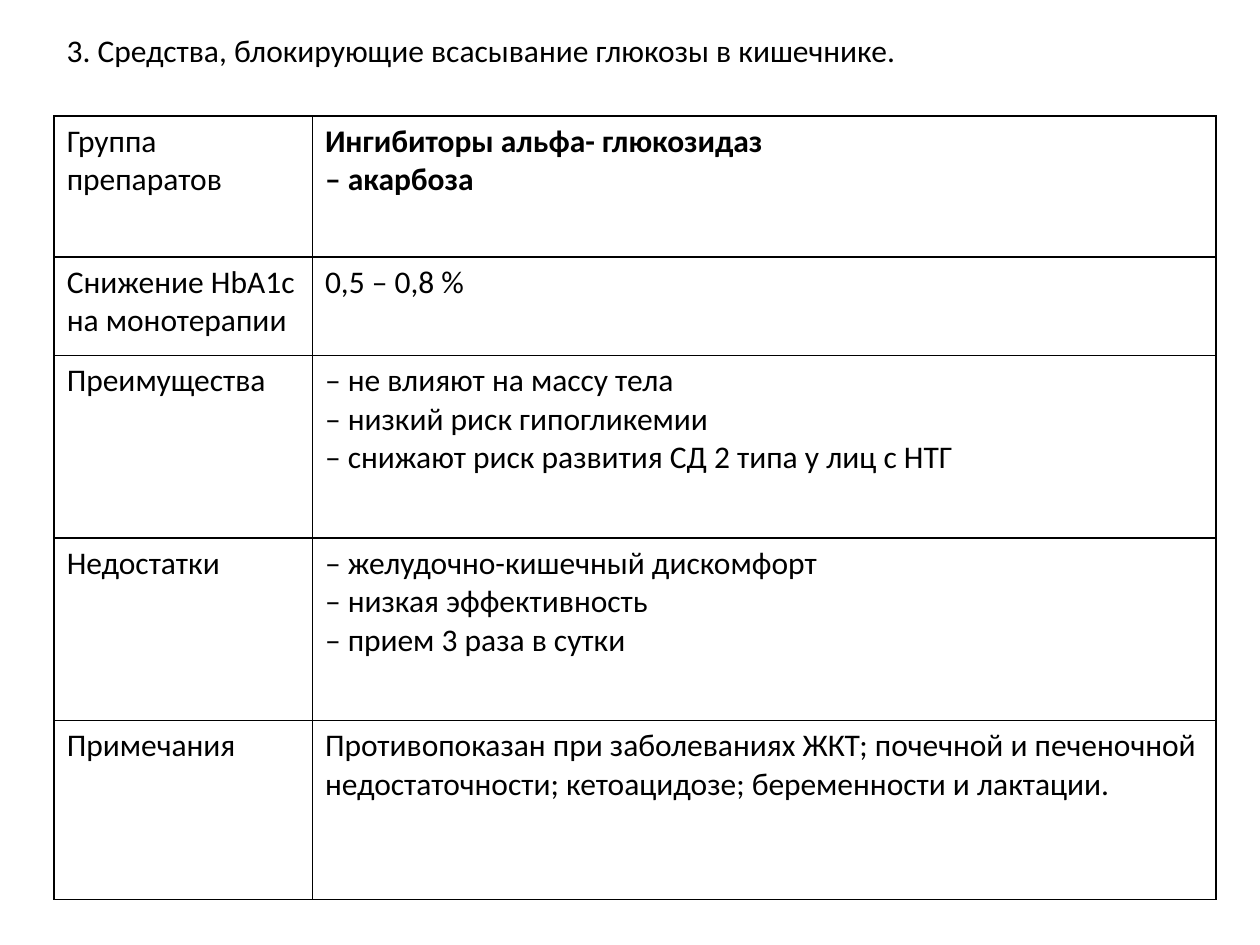
from lxml import etree
from pptx import Presentation
from pptx.dml.color import RGBColor
from pptx.enum.text import MSO_AUTO_SIZE
from pptx.oxml.ns import qn
from pptx.util import Inches, Pt

GROW = MSO_AUTO_SIZE.SHAPE_TO_FIT_TEXT

THEME = {"font": "Calibri", "size": 18, "text": "000000",
         "fill": "FFFFFF", "border": "000000", "border_pt": 1}

TITLE = "3. Средства, блокирующие всасывание глюкозы в кишечнике."
# row height, label, paragraphs
ROWS = [
    (1.12, "Группа препаратов",
     ["Ингибиторы альфа- глюкозидаз", "– акарбоза"]),
    (0.78, "Снижение HbA1c на монотерапии", ["0,5 – 0,8 %"]),
    (1.45, "Преимущества",
     ["– не влияют на массу тела",
      "– низкий риск гипогликемии",
      "– снижают риск развития СД 2 типа у лиц с НТГ"]),
    (1.45, "Недостатки",
     ["– желудочно-кишечный дискомфорт",
      "– низкая эффективность",
      "– прием 3 раза в сутки"]),
    (1.42, "Примечания",
     ["Противопоказан при заболеваниях ЖКТ; почечной и печеночной "
      "недостаточности; кетоацидозе; беременности и лактации."]),
]
LEFT, TABLE_TOP = 0.43, 0.92
COL_WIDTHS = [2.05, 7.17]


def write(tf, lines, bold=False):
    for i, line in enumerate(lines):
        p = tf.paragraphs[0] if i == 0 else tf.add_paragraph()
        r = p.add_run()
        r.text = line
        r.font.name = THEME["font"]
        r.font.size = Pt(THEME["size"])
        r.font.bold = bold
        r.font.color.rgb = RGBColor.from_string(THEME["text"])


def add_borders(cell):
    """Draw all four sides; the lines must precede the fill in tcPr."""
    tc_pr = cell._tc.get_or_add_tcPr()
    for i, side in enumerate(("a:lnL", "a:lnR", "a:lnT", "a:lnB")):
        ln = etree.Element(qn(side), w=str(Pt(THEME["border_pt"])))
        solid = etree.SubElement(ln, qn("a:solidFill"))
        etree.SubElement(solid, qn("a:srgbClr"), val=THEME["border"])
        tc_pr.insert(i, ln)


def add_title(s):
    tf = s.shapes.add_textbox(Inches(LEFT), Inches(0.2),
                              Inches(9.29), Inches(0.4)).text_frame
    tf.word_wrap = True
    tf.auto_size = GROW
    write(tf, [TITLE])


def add_drug_table(s):
    height = sum(row[0] for row in ROWS)
    table = s.shapes.add_table(len(ROWS), len(COL_WIDTHS),
                               Inches(LEFT), Inches(TABLE_TOP),
                               Inches(sum(COL_WIDTHS)), Inches(height)).table
    table.first_row = table.horz_banding = False
    for col, width in zip(table.columns, COL_WIDTHS):
        col.width = Inches(width)
    for i, (row_height, label, lines) in enumerate(ROWS):
        table.rows[i].height = Inches(row_height)
        for j, content in enumerate(([label], lines)):
            cell = table.cell(i, j)
            cell.fill.solid()
            cell.fill.fore_color.rgb = RGBColor.from_string(THEME["fill"])
            add_borders(cell)
            write(cell.text_frame, content, bold=(i == 0 and j == 1))


def main():
    prs = Presentation()
    prs.slide_width, prs.slide_height = Inches(10), Inches(7.5)
    s = prs.slides.add_slide(prs.slide_layouts[6])
    add_drug_table(s)
    add_title(s)
    prs.save("out.pptx")


if __name__ == "__main__":
    main()
